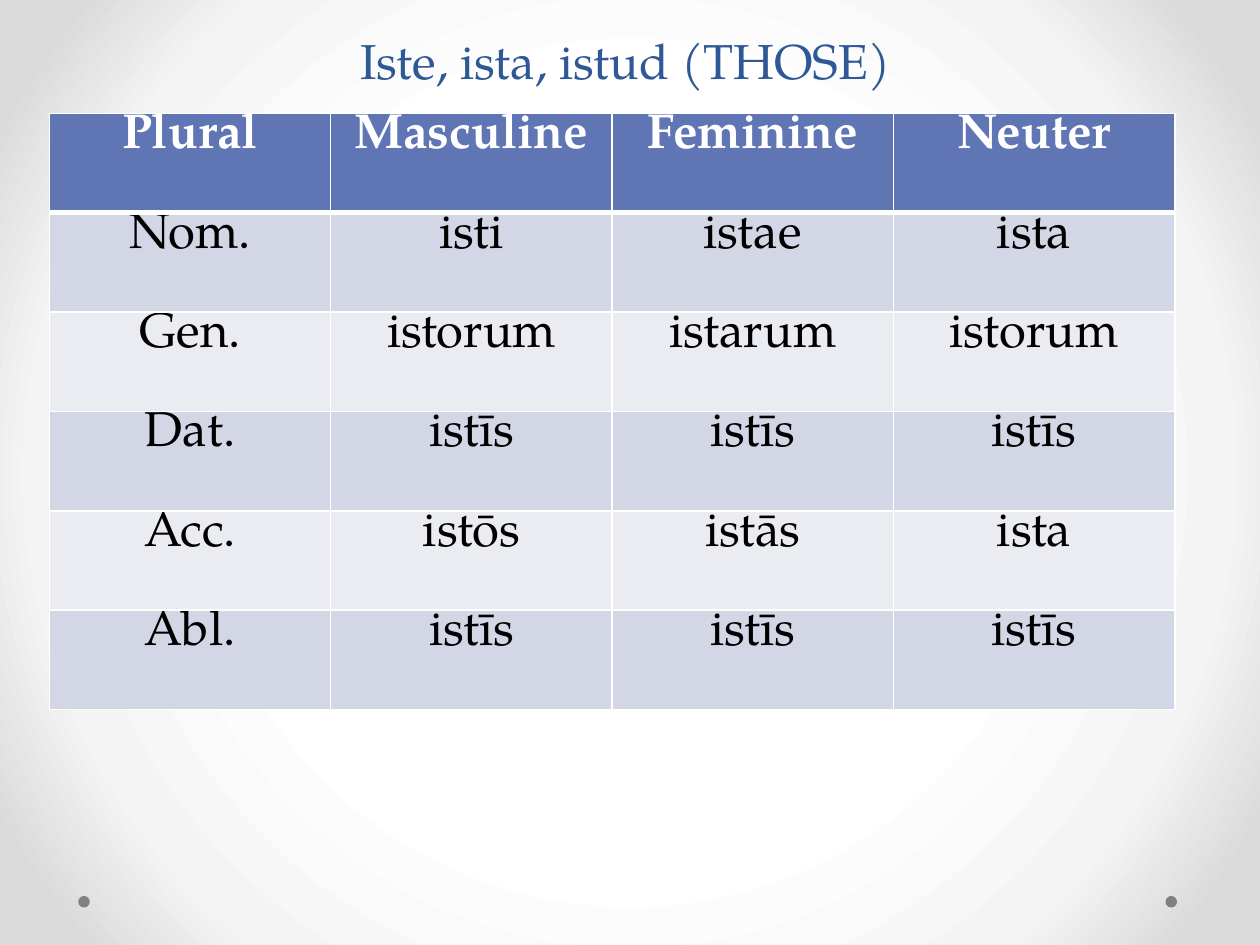
from pptx import Presentation, oxml
from pptx.dml.color import RGBColor
from pptx.enum import shapes, text
from pptx.oxml import ns
from pptx.util import Pt

TITLE = "Iste, ista, istud (THOSE)"
ROWS = [
    ("Plural", "Masculine", "Feminine", "Neuter"),
    ("Nom.", "isti", "istae", "ista"),
    ("Gen.", "istorum", "istarum", "istorum"),
    ("Dat.", "istīs", "istīs", "istīs"),
    ("Acc.", "istōs", "istās", "ista"),
    ("Abl.", "istīs", "istīs", "istīs"),
]
BACKGROUND_STOPS = [(50, "FFFFFF"), (76, "F4F4F4"), (92, "DADADA")]
DOT_LEFTS = (666, 44.7)

FONT = "TeX Gyre Pagella"
WHITE = RGBColor(0xFF, 0xFF, 0xFF)
BLACK = RGBColor(0, 0, 0)
GRAY = RGBColor(0x80, 0x80, 0x80)
TITLE_BLUE = RGBColor(0x2F, 0x58, 0x97)
HEADER_BLUE = RGBColor(0x60, 0x76, 0xB4)
BANDS = (RGBColor(0xEA, 0xEC, 0xF2), RGBColor(0xD2, 0xD6, 0xE5))

TABLE_LEFT, TABLE_TOP = 28.2, 64.8
COLUMN_WIDTH, ROW_HEIGHT = 160.8, 56.8
DOT_TOP, DOT_SIZE = 512, 6.6


def write(frame, content, color=BLACK, bold=False, size=28, spacing=None):
    paragraph = frame.paragraphs[0]
    paragraph.alignment = text.PP_ALIGN.CENTER
    paragraph.line_spacing = spacing
    run = paragraph.add_run()
    run.text = content
    run.font.name = FONT
    run.font.size = Pt(size)
    run.font.bold = bold
    run.font.color.rgb = color


def paint_background(slide):
    stops = "".join(
        f'<a:gs pos="{position * 1000}"><a:srgbClr val="{color}"/></a:gs>'
        for position, color in BACKGROUND_STOPS
    )
    slide.element.cSld.insert(0, oxml.parse_xml(
        f'<p:bg {ns.nsdecls("p", "a")}><p:bgPr><a:gradFill><a:gsLst>{stops}</a:gsLst>'
        '<a:path path="circle"><a:fillToRect l="50000" t="50000" r="50000" b="50000"/>'
        '</a:path></a:gradFill><a:effectLst/></p:bgPr></p:bg>'
    ))


def add_borders(cell, widths):
    properties = cell._tc.get_or_add_tcPr()
    for index, (side, width) in enumerate(widths.items()):
        properties.insert(index, oxml.parse_xml(
            f'<a:{side} {ns.nsdecls("a")} w="{Pt(width)}"><a:solidFill>'
            f'<a:srgbClr val="{WHITE}"/></a:solidFill></a:{side}>'
        ))


def add_dot(slide, left):
    dot = slide.shapes.add_shape(
        shapes.MSO_SHAPE.OVAL, Pt(left), Pt(DOT_TOP), Pt(DOT_SIZE), Pt(DOT_SIZE))
    dot.shadow.inherit = False
    dot.fill.solid()
    dot.fill.fore_color.rgb = GRAY
    dot.line.fill.background()


def add_title(slide):
    frame = slide.shapes.add_textbox(Pt(132.5), Pt(-16), Pt(450), Pt(70.6)).text_frame
    frame.word_wrap = True
    frame.vertical_anchor = text.MSO_ANCHOR.BOTTOM
    write(frame, TITLE, color=TITLE_BLUE)


def add_declension_table(slide):
    columns = len(ROWS[0])
    table = slide.shapes.add_table(
        len(ROWS), columns, Pt(TABLE_LEFT), Pt(TABLE_TOP),
        Pt(COLUMN_WIDTH * columns), Pt(ROW_HEIGHT * len(ROWS))).table
    for column in table.columns:
        column.width = Pt(COLUMN_WIDTH)
    for row_index, words in enumerate(ROWS):
        header = row_index == 0
        table.rows[row_index].height = Pt(ROW_HEIGHT)
        for column_index, word in enumerate(words):
            cell = table.cell(row_index, column_index)
            cell.margin_top = cell.margin_bottom = 0
            cell.fill.solid()
            cell.fill.fore_color.rgb = HEADER_BLUE if header else BANDS[row_index % 2]
            add_borders(cell, {"lnL": 1, "lnR": 1,
                               "lnT": 3 if row_index == 1 else 1,
                               "lnB": 3 if header else 1})
            write(cell.text_frame, word, color=WHITE if header else BLACK, bold=header)


def main():
    presentation = Presentation()
    presentation.slide_width, presentation.slide_height = Pt(720), Pt(540)
    slide = presentation.slides.add_slide(presentation.slide_layouts[6])
    paint_background(slide)
    for left in DOT_LEFTS:
        add_dot(slide, left)
    add_title(slide)
    add_declension_table(slide)
    presentation.save("out.pptx")


if __name__ == "__main__":
    main()
